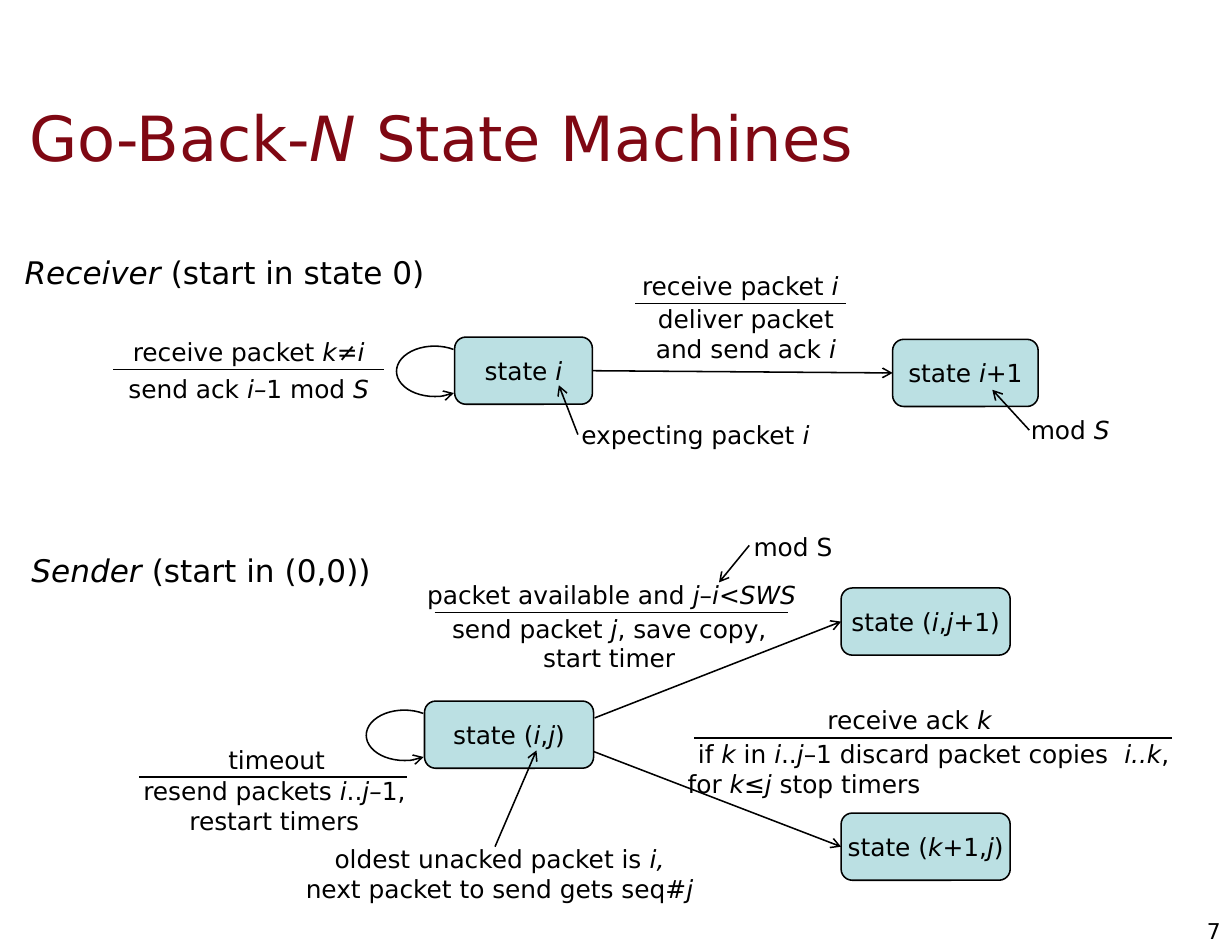
"""Build the Go-Back-N state machine slide."""
from dataclasses import dataclass

from lxml.etree import SubElement
from pptx import Presentation
from pptx.dml.color import RGBColor
from pptx.enum.shapes import MSO_AUTO_SHAPE_TYPE as Preset, MSO_CONNECTOR as Connector
from pptx.enum.text import MSO_ANCHOR as Anchor, MSO_AUTO_SIZE as AutoSize, PP_ALIGN as Align
from pptx.oxml.ns import qn
from pptx.util import Inches, Pt

FONT = "DejaVu Sans"
COLORS = {"title": "7F0813", "ink": "000000", "state": "BBE0E3"}
LABEL_FRAME = {
    "word_wrap": False, "auto_size": AutoSize.SHAPE_TO_FIT_TEXT,
    "vertical_anchor": Anchor.MIDDLE, "margin_left": 0, "margin_right": 0,
    "margin_top": 0, "margin_bottom": 0,
}
STATE_FRAME = {"word_wrap": False, "vertical_anchor": Anchor.MIDDLE}
TITLE_FRAME = {
    "word_wrap": True, "auto_size": AutoSize.NONE, "vertical_anchor": Anchor.MIDDLE,
    "margin_left": Inches(0.11), "margin_right": Inches(0.11),
    "margin_top": Inches(0.06), "margin_bottom": Inches(0.06),
}
STATE_HEIGHT = 0.6


@dataclass
class Label:
    """Text at a place; asterisks toggle italics and \\v breaks a line."""
    text: str
    left: float
    top: float
    width: float
    size: int = 16
    align: Align = Align.CENTER
    last_align: Align | None = None


@dataclass
class State:
    """A rounded state box."""
    text: str
    left: float
    top: float
    width: float


@dataclass
class Line:
    """A straight line between two points."""
    x1: float
    y1: float
    x2: float
    y2: float


@dataclass
class Transition:
    """A condition above a bar and an action below it."""
    bar: Line
    condition: Label
    action: Label


STATES = [
    State("state *i*", 4.06, 3.01, 1.23),
    State("state *i*+1", 7.97, 3.03, 1.3),
    State("state (*i*,*j*)", 3.79, 6.26, 1.51),
    State("state (*i*,*j*+1)", 7.51, 5.25, 1.51),
    State("state (*k*+1,*j*)", 7.51, 7.26, 1.51),
]
SELF_LOOPS = [(3.54, 3.09), (3.27, 6.34)]
ARROWS = [
    Line(5.29, 3.31, 7.97, 3.33),
    Line(5.16, 3.88, 4.99, 3.44),
    Line(9.19, 3.84, 8.86, 3.48),
    Line(5.31, 6.41, 7.51, 5.55),
    Line(5.3, 6.71, 7.51, 7.56),
    Line(4.42, 7.56, 4.79, 6.7),
    Line(6.69, 4.87, 6.42, 5.2),
]
TRANSITIONS = [
    Transition(Line(1.01, 3.3, 3.43, 3.3),
               Label("receive packet *k*≠*i*", 1.15, 3, 2.14),
               Label("send ack *i–*1 mod *S*", 1.08, 3.33, 2.28)),
    Transition(Line(5.67, 2.71, 7.55, 2.71),
               Label("receive packet *i*", 5.7, 2.41, 1.82),
               Label("deliver packet\vand send ack *i*", 5.82, 2.71, 1.68)),
    Transition(Line(3.88, 5.47, 7.04, 5.47),
               Label("packet available and *j*–*i*<*SWS*", 3.77, 5.17, 3.38),
               Label("send packet *j*, save copy,\nstart timer", 4.02, 5.47, 2.84)),
    Transition(Line(6.2, 6.59, 10.46, 6.59),
               Label("receive ack *k*", 7.38, 6.29, 1.48),
               Label("if *k* in *i*..*j*–1 discard packet copies  *i..k*,\n"
                     "for *k*≤*j* stop timers", 6.14, 6.59, 4.39,
                     last_align=Align.JUSTIFY)),
    Transition(Line(1.24, 6.94, 3.63, 6.94),
               Label("timeout", 2.01, 6.65, 0.92),
               Label("resend packets *i*..*j–*1,\vrestart timers", 1.2, 6.92, 2.5)),
]
NOTES = [
    Label("*Receiver *(start in state 0)", 0.22, 2.26, 3.66, 20, Align.LEFT),
    Label("*Sender *(start in (0,0))", 0.28, 4.92, 3.25, 20, Align.LEFT),
    Label("expecting packet *i*", 5.16, 3.74, 2.1),
    Label("mod *S*", 9.19, 3.7, 0.73),
    Label("mod S", 6.69, 4.74, 0.78),
    Label("oldest unacked packet is *i,\v*next packet to send gets seq#*j*", 2.64, 7.53, 3.64),
    Label("7", 10.56, 8.19, 0.34, 14, Align.RIGHT),
]


def write_text(frame, text: str, size: int, align: Align, color: str, layout: dict) -> None:
    """Fill a text frame, toggling italics at each asterisk."""
    for name, value in layout.items():
        setattr(frame, name, value)
    for row, line in enumerate(text.split("\n")):
        paragraph = frame.add_paragraph() if row else frame.paragraphs[0]
        paragraph.alignment = align
        for turn, piece in enumerate(line.split("*")):
            for part_number, part in enumerate(piece.split("\v")):
                if part_number:
                    paragraph.add_line_break()
                if part:
                    run = paragraph.add_run()
                    run.text = part
                    style = {"name": FONT, "size": Pt(size), "italic": turn % 2 == 1}
                    for name, value in style.items():
                        setattr(run.font, name, value)
                    run.font.color.rgb = RGBColor.from_string(COLORS[color])


def draw_label(slide, label: Label) -> None:
    """Draw a borderless label sized by its number of lines."""
    rows = 1 + label.text.count("\n") + label.text.count("\v")
    box = slide.shapes.add_textbox(Inches(label.left), Inches(label.top),
                                   Inches(label.width), Inches(rows * label.size * 0.017))
    write_text(box.text_frame, label.text, label.size, label.align, "ink", LABEL_FRAME)
    if label.last_align is not None:
        box.text_frame.paragraphs[-1].alignment = label.last_align


def ink_line(shape, arrow: bool = False) -> None:
    """Give a shape a thin dark line, with an arrowhead if asked."""
    shape.line.color.rgb = RGBColor.from_string(COLORS["ink"])
    shape.line.width = Pt(1)
    if arrow:
        SubElement(shape.line._get_or_add_ln(), qn("a:tailEnd"), type="arrow")


def draw_state(slide, state: State) -> None:
    """Draw a filled state box."""
    box = slide.shapes.add_shape(Preset.ROUNDED_RECTANGLE, Inches(state.left),
                                 Inches(state.top), Inches(state.width), Inches(STATE_HEIGHT))
    box.shadow.inherit = False
    box.fill.solid()
    box.fill.fore_color.rgb = RGBColor.from_string(COLORS["state"])
    ink_line(box)
    write_text(box.text_frame, state.text, 16, Align.CENTER, "ink", STATE_FRAME)


def draw_self_loop(slide, left: float, top: float) -> None:
    """Draw an arc that leaves a state and returns to it."""
    loop = slide.shapes.add_shape(Preset.ARC, Inches(left), Inches(top),
                                  Inches(0.68), Inches(0.45))
    loop.shadow.inherit = False
    loop.fill.background()
    loop.adjustments[0], loop.adjustments[1] = 137.49, 78.95
    loop.element.spPr.get_or_add_xfrm().set("flipH", "1")
    ink_line(loop, arrow=True)


def draw_line(slide, line: Line, arrow: bool = False) -> None:
    """Draw a bar or an arrow."""
    connector = slide.shapes.add_connector(Connector.STRAIGHT, Inches(line.x1), Inches(line.y1),
                                           Inches(line.x2), Inches(line.y2))
    ink_line(connector, arrow)
    SubElement(connector.element.spPr, qn("a:effectLst"))


def main() -> None:
    """Assemble and save the slide."""
    deck = Presentation()
    deck.slide_width, deck.slide_height = Inches(11), Inches(8.5)
    slide = deck.slides.add_slide(deck.slide_layouts[5])
    title = slide.shapes.title
    place = {"left": 0.15, "top": 0.7, "width": 10.53, "height": 1.04}
    for name, value in place.items():
        setattr(title, name, Inches(value))
    write_text(title.text_frame, "Go-Back-*N* State Machines", 40, Align.LEFT,
               "title", TITLE_FRAME)
    for state in STATES:
        draw_state(slide, state)
    for left, top in SELF_LOOPS:
        draw_self_loop(slide, left, top)
    for arrow in ARROWS:
        draw_line(slide, arrow, arrow=True)
    for transition in TRANSITIONS:
        draw_line(slide, transition.bar)
        draw_label(slide, transition.condition)
        draw_label(slide, transition.action)
    for note in NOTES:
        draw_label(slide, note)
    deck.save("out.pptx")


if __name__ == "__main__":
    main()
